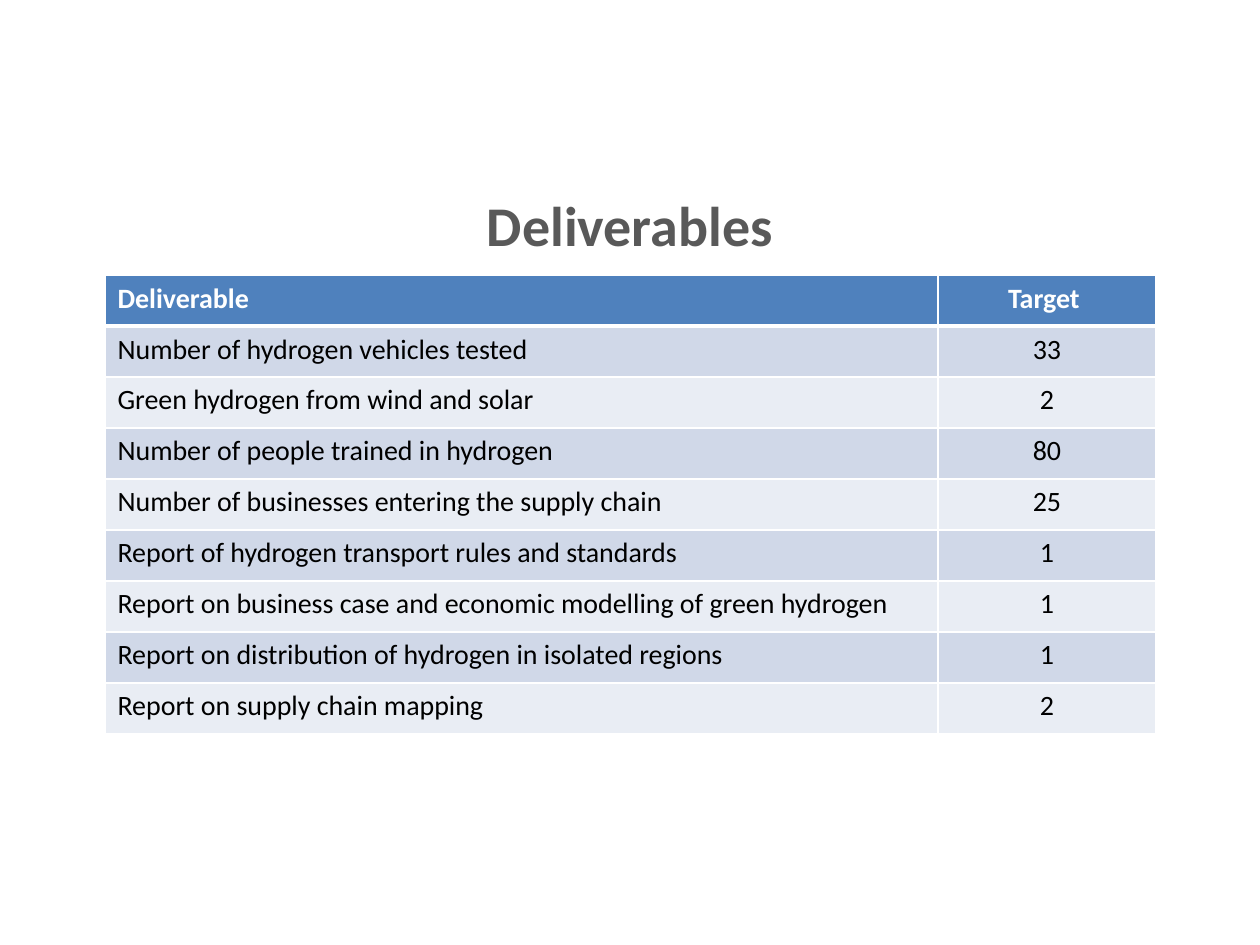
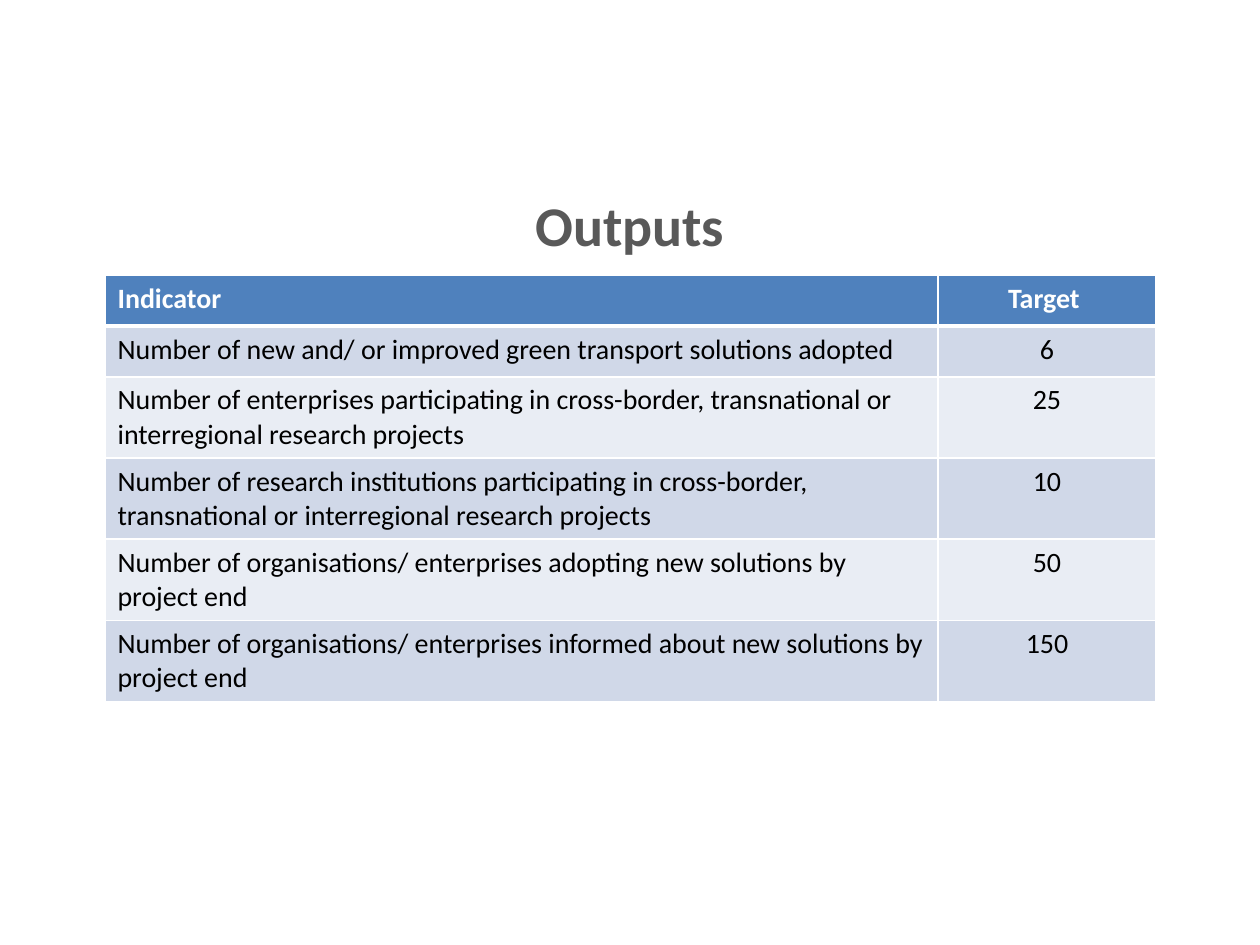
from lxml import etree
from pptx import Presentation
from pptx.dml.color import RGBColor
from pptx.enum.text import MSO_ANCHOR as Anchor, MSO_AUTO_SIZE as AutoSize, PP_ALIGN as Align
from pptx.oxml import parse_xml
from pptx.oxml.ns import nsdecls
from pptx.util import Emu, Pt

PX = 914400 / 126
FONT = "Calibri"
TITLE_GREY = "595959"
HEADER_BLUE = "4F81BD"
BANDS = ["D0D8E8", "E9EDF4"]
WHITE, BLACK = "FFFFFF", "000000"
LABEL_WIDTH, TARGET_WIDTH = 833, 218
ONE_LINE, TWO_LINES = 51, 81
WRAP_LENGTH = 70

SLIDES = [
    ("Deliverables", [
        ("Deliverable", "Target "),
        ("Number of hydrogen vehicles tested", "33"),
        ("Green hydrogen from wind and solar", "2"),
        ("Number of people trained in hydrogen", "80"),
        ("Number of businesses entering the supply chain", "25"),
        ("Report of hydrogen transport rules and standards", "1"),
        ("Report on business case and economic modelling of green hydrogen", "1"),
        ("Report on distribution of hydrogen in isolated regions", "1"),
        ("Report on supply chain mapping", "2"),
    ]),
    ("Outputs", [
        ("Indicator", "Target "),
        ("Number of new and/ or improved green transport solutions adopted", "6"),
        ("Number of enterprises participating in cross-border, transnational "
         "or interregional research projects", "25"),
        ("Number of research institutions participating in cross-border, "
         "transnational or interregional research projects", "10"),
        ("Number of organisations/ enterprises adopting new solutions by project end", "50"),
        ("Number of organisations/ enterprises informed about new solutions by project end",
         "150"),
    ]),
]


def px(length):
    return Emu(round(length * PX))


def format_text(paragraph, color, align, **font_values):
    paragraph.alignment = align
    paragraph.font.color.rgb = RGBColor.from_string(color)
    for attribute, value in {"name": FONT, **font_values}.items():
        setattr(paragraph.font, attribute, value)


prs = Presentation()
prs.slide_width, prs.slide_height = px(1260), px(945)
title_only = prs.slide_layouts[5]

for heading, rows in SLIDES:
    slide = prs.slides.add_slide(title_only)
    title = slide.shapes.title
    for attribute, value in {"left": 63, "top": 180, "width": 1134, "height": 664}.items():
        setattr(title, attribute, px(value))
    frame = title.text_frame
    frame.text = heading
    for attribute, value in {"auto_size": AutoSize.NONE, "vertical_anchor": Anchor.TOP,
                             "margin_top": px(10), "word_wrap": True}.items():
        setattr(frame, attribute, value)
    format_text(frame.paragraphs[0], TITLE_GREY, Align.CENTER, size=Pt(32), bold=True)

    heights = [TWO_LINES if len(label) > WRAP_LENGTH else ONE_LINE for label, _ in rows]
    targets = slide.shapes.add_table(
        len(rows), 2, px(105), px(275), px(LABEL_WIDTH + TARGET_WIDTH), px(sum(heights))).table
    targets.columns[0].width = px(LABEL_WIDTH)
    targets.columns[1].width = px(TARGET_WIDTH)

    for r, row in enumerate(rows):
        targets.rows[r].height = px(heights[r])
        is_header = r == 0
        fill = HEADER_BLUE if is_header else BANDS[(r - 1) % 2]
        borders = {"L": 1, "R": 1, "T": 3 if r == 1 else 1, "B": 3 if is_header else 1}
        for c, text in enumerate(row):
            cell = targets.cell(r, c)
            cell.text = text
            cell.fill.solid()
            cell.fill.fore_color.rgb = RGBColor.from_string(fill)
            format_text(cell.text_frame.paragraphs[0], WHITE if is_header else BLACK,
                        Align.CENTER if c else Align.LEFT, size=Pt(16), bold=is_header)
            properties = cell._tc.get_or_add_tcPr()
            for position, (side, width) in enumerate(borders.items()):
                line = parse_xml(f'<a:ln{side} {nsdecls("a")} w="{Pt(width)}"/>')
                solid = etree.SubElement(line, f"{{{line.nsmap['a']}}}solidFill")
                etree.SubElement(solid, f"{{{line.nsmap['a']}}}srgbClr", val=WHITE)
                properties.insert(position, line)

prs.save("out.pptx")
